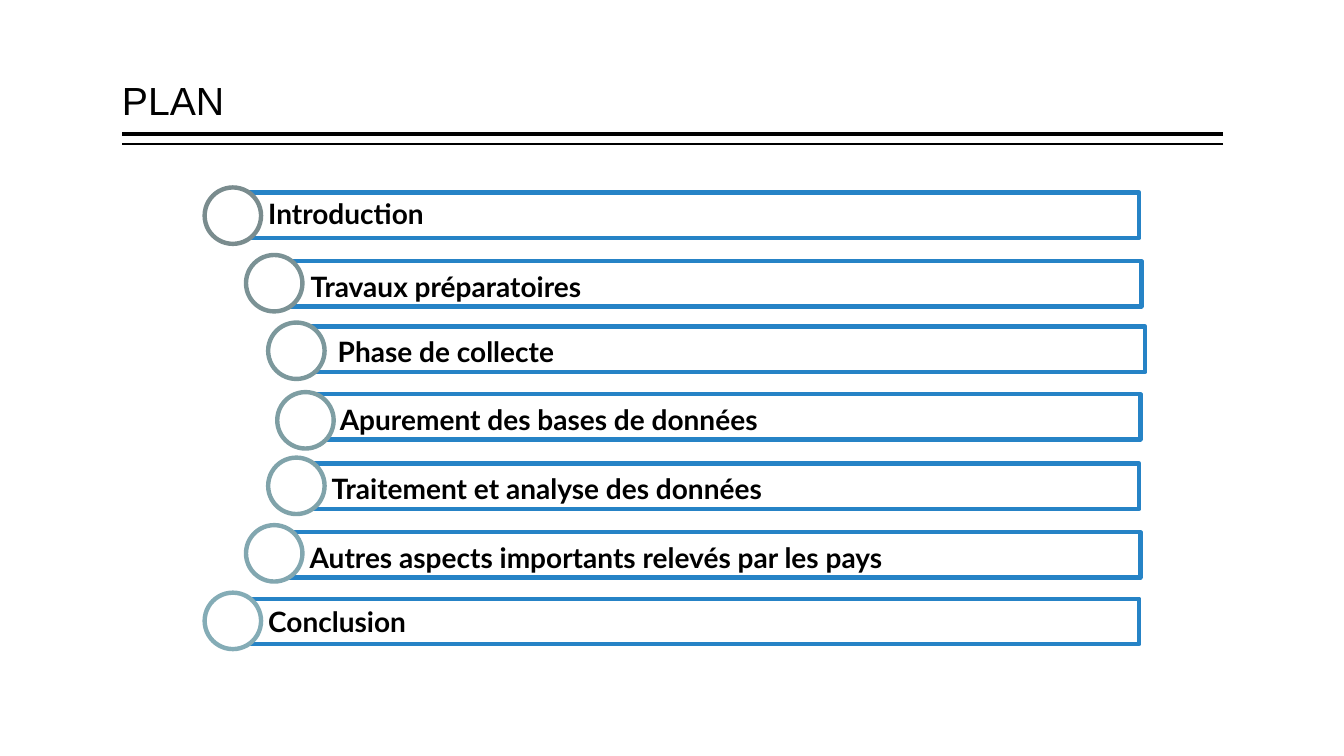
from lxml.etree import SubElement
from pptx import Presentation
from pptx.dml.color import RGBColor
from pptx.enum.shapes import MSO_CONNECTOR, MSO_SHAPE
from pptx.enum.text import MSO_ANCHOR, MSO_AUTO_SIZE, PP_ALIGN
from pptx.oxml.ns import qn
from pptx.util import Inches, Pt

TITLE = "PLAN"
COLORS = {"text": "000000", "paper": "FFFFFF", "bar": "2683C6"}

# Text, bar (left, top, width), circle (left, top), circle outline,
# top inset of the text, line spacing
STEPS = [
    ("Introduction", (2.31, 1.91, 8.99), (2.03, 1.86), "7A8C8E", 0.06, 0.9),
    ("Travaux préparatoires", (2.73, 2.59, 8.59), (2.44, 2.53), "7B9295", 0.1, 1),
    ("Phase de collecte", (3, 3.24, 8.36), (2.66, 3.2), "7C989C", 0.1, 1),
    ("Apurement des bases de données", (3.02, 3.91, 8.29), (2.75, 3.89), "7E9EA3", 0.1, 1),
    ("Traitement et analyse des données", (2.94, 4.6, 8.36), (2.66, 4.54), "80A3AA", 0.1, 1),
    ("Autres aspects importants relevés par les pays", (2.72, 5.28, 8.59), (2.44, 5.21),
     "82A7B0", 0.1, 1),
    ("Conclusion", (2.31, 5.94, 8.99), (2.03, 5.88), "84ACB6", 0.06, 1),
]
RULES = [(1.33, 3), (1.43, 1)]  # height on the slide, line width
LEFT, WIDTH = 1.21, 10.92
BAR_H, CIRCLE = 0.45, 0.56


def rgb(value):
    return RGBColor.from_string(value)


def add_outlined(s, kind, left, top, width, height, outline):
    sp = s.shapes.add_shape(kind, Inches(left), Inches(top), Inches(width), Inches(height))
    sp.shadow.inherit = False
    sp.fill.solid()
    sp.fill.fore_color.rgb = rgb(COLORS["paper"])
    sp.line.color.rgb = rgb(outline)
    sp.line.width = Pt(3.15)
    return sp


def set_text(sp, text, font, size, bold, anchor, insets, spacing):
    tf = sp.text_frame
    tf.word_wrap = True
    tf.auto_size = MSO_AUTO_SIZE.NONE
    tf.vertical_anchor = anchor
    tf.margin_left, tf.margin_top, tf.margin_right, tf.margin_bottom = map(Inches, insets)
    p = tf.paragraphs[0]
    p.alignment = PP_ALIGN.LEFT
    p.line_spacing = spacing
    r = p.add_run()
    r.text = text
    r.font.name = font
    r.font.size = Pt(size)
    r.font.bold = bold
    r.font.color.rgb = rgb(COLORS["text"])


prs = Presentation()
prs.slide_width, prs.slide_height = Inches(13.33), Inches(7.5)
s = prs.slides.add_slide(prs.slide_layouts[5])

# Title
title = s.shapes.title
title.left, title.top = Inches(LEFT), Inches(0.08)
title.width, title.height = Inches(WIDTH), Inches(1.2)
set_text(title, TITLE, "Arial", 28, False, MSO_ANCHOR.BOTTOM, (0, 0.05, 0, 0.05), 0.9)

# Double rule under the title
for y, weight in RULES:
    rule = s.shapes.add_connector(MSO_CONNECTOR.STRAIGHT, Inches(LEFT + WIDTH), Inches(y),
                                  Inches(LEFT), Inches(y))
    rule.line.color.rgb = rgb(COLORS["text"])
    rule.line.width = Pt(weight)
    SubElement(rule.element.spPr, qn("a:effectLst"))

# Bars, each with a circle over its left end
for text, (left, top, width), (cx, cy), outline, inset, spacing in STEPS:
    bar = add_outlined(s, MSO_SHAPE.RECTANGLE, left, top, width, BAR_H, COLORS["bar"])
    set_text(bar, text, "Lato", 20, True, MSO_ANCHOR.MIDDLE, (0.35, inset, 0.06, 0.06), spacing)
    add_outlined(s, MSO_SHAPE.OVAL, cx, cy, CIRCLE, CIRCLE, outline)

prs.save("out.pptx")
